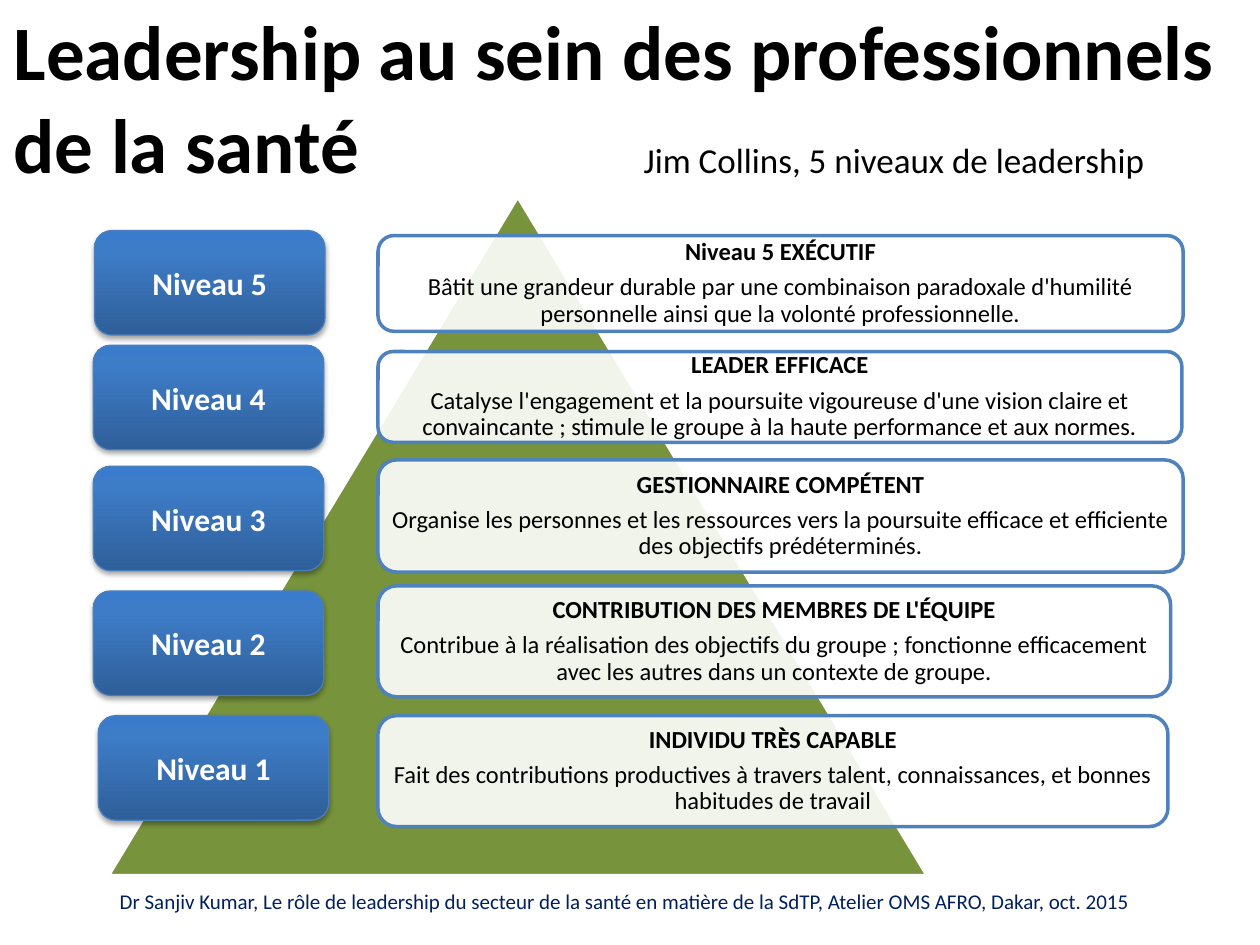
from dataclasses import dataclass

from lxml import etree
from pptx import Presentation
from pptx.dml.color import RGBColor
from pptx.enum.shapes import MSO_SHAPE
from pptx.enum.text import MSO_ANCHOR, PP_ALIGN
from pptx.oxml.ns import qn
from pptx.util import Pt

PX = 9144
FONT = "Calibri"
TRIANGLE = MSO_SHAPE.ISOSCELES_TRIANGLE
ROUNDED = MSO_SHAPE.ROUNDED_RECTANGLE
LEFT, CENTER = PP_ALIGN.LEFT, PP_ALIGN.CENTER
TOP, MIDDLE = MSO_ANCHOR.TOP, MSO_ANCHOR.MIDDLE

COLORS = {
    "black": "000000",
    "white": "FFFFFF",
    "navy": "002060",
    "green": "77933C",
    "card_line": "4F81BD",
    "button_line": "4B7EBC",
    "button_dark": "2F5F99",
    "button_mid": "3D7CC7",
    "button_light": "3A7CCB",
}
BUTTON_STOPS = ((0, "button_dark"), (80, "button_mid"), (100, "button_light"))


@dataclass(frozen=True)
class Box:
    left: int
    top: int
    width: int
    height: int

    def emu(self) -> tuple:
        return tuple(n * PX for n in (self.left, self.top, self.width, self.height))


@dataclass(frozen=True)
class Level:
    name: str
    button: Box
    card: Box
    heading: str
    detail: str


LEVELS = (
    Level("Niveau 5", Box(75, 183, 183, 83), Box(300, 187, 639, 76),
          "Niveau 5 EXÉCUTIF",
          "Bâtit une grandeur durable par une combinaison paradoxale d'humilité "
          "personnelle ainsi que la volonté professionnelle."),
    Level("Niveau 4", Box(74, 274, 183, 83), Box(300, 279, 638, 72),
          "LEADER EFFICACE",
          "Catalyse l'engagement et la poursuite vigoureuse d'une vision claire et "
          "convaincante ; stimule le groupe à la haute performance et aux normes."),
    Level("Niveau 3", Box(74, 370, 183, 83), Box(300, 365, 639, 89),
          "GESTIONNAIRE COMPÉTENT",
          "Organise les personnes et les ressources vers la poursuite efficace et "
          "efficiente des objectifs prédéterminés."),
    Level("Niveau 2", Box(74, 469, 183, 83), Box(300, 465, 629, 88),
          "CONTRIBUTION DES MEMBRES DE L'ÉQUIPE",
          "Contribue à la réalisation des objectifs du groupe ; fonctionne "
          "efficacement avec les autres dans un contexte de groupe."),
    Level("Niveau 1", Box(78, 568, 183, 83), Box(300, 568, 627, 88),
          "INDIVIDU TRÈS CAPABLE",
          "Fait des contributions productives à travers talent, connaissances, "
          "et bonnes habitudes de travail"),
)


def rgb(name: str) -> RGBColor:
    return RGBColor.from_string(COLORS[name])


def add_span(para, text: str, *, size: int, color: str = "black", bold: bool = False) -> None:
    span = para.add_run()
    span.text = text
    span.font.name = FONT
    span.font.size = Pt(size)
    span.font.bold = bold
    span.font.color.rgb = rgb(color)


def add_text(page, box: Box, anchor):
    frame = page.shapes.add_textbox(*box.emu()).text_frame
    frame.word_wrap = True
    frame.vertical_anchor = anchor
    return frame.paragraphs[0]


def add_outlined(page, kind, box: Box, line: str, weight: float):
    shape = page.shapes.add_shape(kind, *box.emu())
    shape.shadow.inherit = False
    shape.line.color.rgb = rgb(line)
    shape.line.width = Pt(weight)
    return shape


def add_color(parent, name: str, alpha: int = 100) -> None:
    color = etree.SubElement(parent, qn("a:srgbClr"), val=COLORS[name])
    if alpha < 100:
        etree.SubElement(color, qn("a:alpha"), val=str(alpha * 1000))


def draw_title(page) -> None:
    para = add_text(page, Box(1, -2, 999, 158), TOP)
    para.alignment = LEFT
    tabs = etree.SubElement(para._p.get_or_add_pPr(), qn("a:tabLst"))
    etree.SubElement(tabs, qn("a:tab"), pos=str(500 * PX), algn="l")
    add_span(para, "Leadership au sein des professionnels de la santé\t", size=44, bold=True)
    add_span(para, "Jim Collins, 5 niveaux de leadership", size=20)


def draw_footer(page) -> None:
    para = add_text(page, Box(42, 695, 908, 40), MIDDLE)
    para.alignment = CENTER
    add_span(para, "Dr Sanjiv Kumar, Le rôle de leadership du secteur de la santé en matière "
             "de la SdTP, Atelier OMS AFRO, Dakar, oct. 2015", size=12, color="navy")


def draw_pyramid(page) -> None:
    pyramid = add_outlined(page, TRIANGLE, Box(86, 156, 650, 539), "white", 2)
    pyramid.fill.solid()
    pyramid.fill.fore_color.rgb = rgb("green")


def draw_card(page, level: Level) -> None:
    card = add_outlined(page, ROUNDED, level.card, "card_line", 2)
    card.fill.solid()
    card.fill.fore_color.rgb = rgb("white")
    color = card._element.spPr.find(qn("a:solidFill")).find(qn("a:srgbClr"))
    etree.SubElement(color, qn("a:alpha"), val="90000")
    frame = card.text_frame
    frame.word_wrap = True
    frame.vertical_anchor = MIDDLE
    frame.margin_left = frame.margin_right = 6 * PX
    frame.margin_top = frame.margin_bottom = 6 * PX
    paras = (frame.paragraphs[0], frame.add_paragraph())
    for para, text, bold in zip(paras, (level.heading, level.detail), (True, False)):
        para.alignment = CENTER
        para.line_spacing = 0.9
        para.space_after = Pt(5)
        add_span(para, text, size=14, bold=bold)


def draw_button(page, level: Level) -> None:
    button = add_outlined(page, ROUNDED, level.button, "button_line", 0.75)
    button.fill.gradient()
    button.fill.gradient_angle = 90
    properties = button._element.spPr
    stops = properties.find(qn("a:gradFill")).find(qn("a:gsLst"))
    for stop in list(stops):
        stops.remove(stop)
    for position, name in BUTTON_STOPS:
        add_color(etree.SubElement(stops, qn("a:gs"), pos=str(position * 1000)), name)
    shadow = etree.SubElement(
        properties.find(qn("a:effectLst")), qn("a:outerShdw"),
        blurRad=str(Pt(3.1)), dist=str(Pt(1.8)), dir="5400000", rotWithShape="0")
    add_color(shadow, "black", alpha=35)
    frame = button.text_frame
    frame.word_wrap = True
    frame.vertical_anchor = MIDDLE
    para = frame.paragraphs[0]
    para.alignment = CENTER
    add_span(para, level.name, size=18, color="white", bold=True)


def main() -> None:
    deck = Presentation()
    deck.slide_width, deck.slide_height = 1000 * PX, 750 * PX
    page = deck.slides.add_slide(deck.slide_layouts[6])
    draw_title(page)
    draw_footer(page)
    draw_pyramid(page)
    for level in LEVELS:
        draw_card(page, level)
        draw_button(page, level)
    deck.save("out.pptx")


if __name__ == "__main__":
    main()
